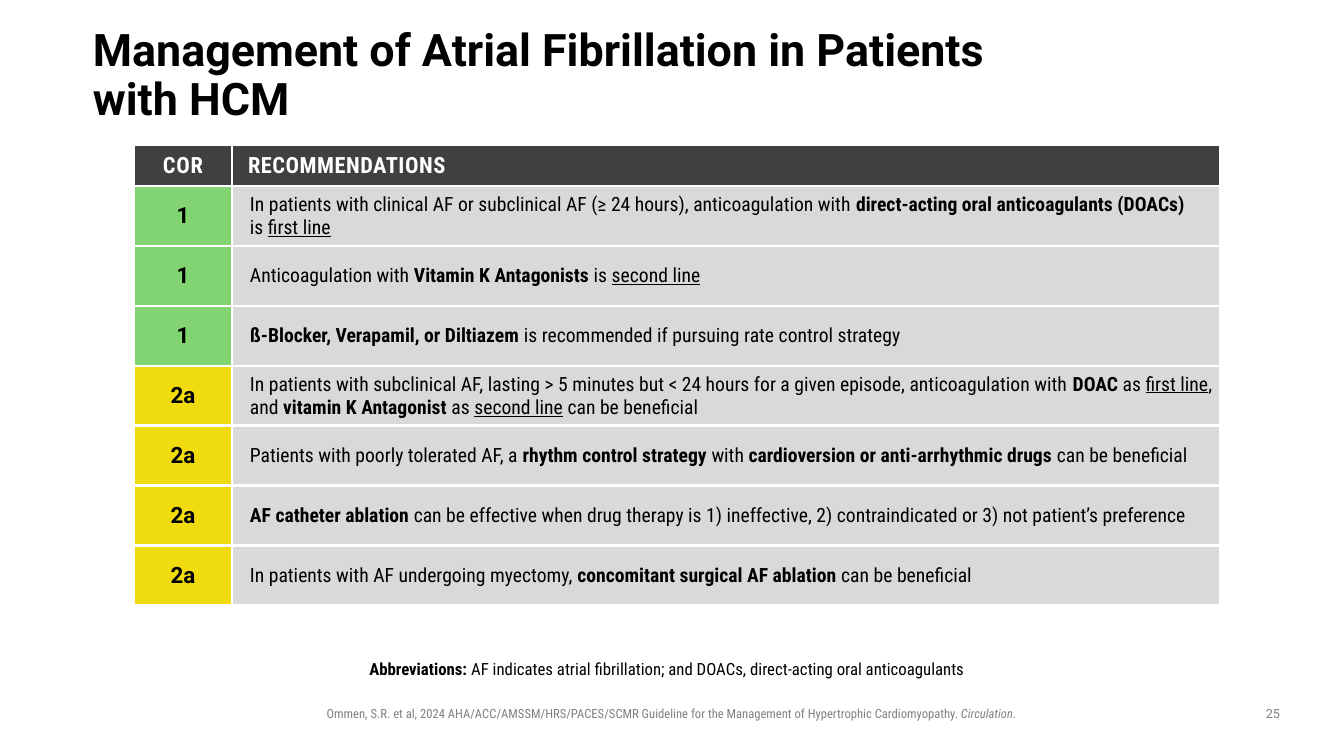
from lxml import etree
from pptx import Presentation
from pptx.dml.color import RGBColor
from pptx.enum.text import MSO_ANCHOR, MSO_AUTO_SIZE, PP_ALIGN
from pptx.oxml.ns import qn
from pptx.util import Pt

LEFT, CENTER = PP_ALIGN.LEFT, PP_ALIGN.CENTER
TOP, MIDDLE = MSO_ANCHOR.TOP, MSO_ANCHOR.MIDDLE
NO_FIT = MSO_AUTO_SIZE.NONE
PX = 914400 / 100.8  # EMU in one px

THEME = {
    "sans": "Roboto", "narrow": "Roboto Condensed",
    "black": "000000", "white": "FFFFFF", "grey": "808080",
    "header": "404040", "row": "D9D9D9",
    "1": "82D472", "2a": "F0DB0E",
    "title": 32, "heading": 16, "text": 14, "note": 12, "small": 9,
    "border": 2.25,
}

RECOMMENDATIONS = [
    ("1", [("In patients with clinical AF or subclinical AF (≥ 24 hours), anticoagulation with ", ""),
           ("direct-acting oral anticoagulants (DOACs)", "b"), ("\n", ""),
           ("is ", ""), ("first line", "u")]),
    ("1", [("Anticoagulation with ", ""), ("Vitamin K Antagonists ", "b"),
           ("is ", ""), ("second line", "u")]),
    ("1", [("ß-Blocker, Verapamil, or Diltiazem ", "b"),
           ("is recommended if pursuing rate control strategy", "")]),
    ("2a", [("In patients with subclinical AF, lasting > 5 minutes but < 24 hours "
             "for a given episode, anticoagulation with ", ""),
            ("DOAC", "b"), (" as ", ""), ("first line", "u"), (", and ", ""),
            ("vitamin K Antagonist ", "b"), ("as ", ""), ("second line", "u"),
            (" can be beneficial", "")]),
    ("2a", [("Patients with poorly tolerated AF, a ", ""), ("rhythm control strategy ", "b"),
            ("with ", ""), ("cardioversion or anti-arrhythmic drugs ", "b"),
            ("can be beneficial", "")]),
    ("2a", [("AF catheter ablation ", "b"),
            ("can be effective when drug therapy is 1) ineffective, "
             "2) contraindicated or 3) not patient’s preference", "")]),
    ("2a", [("In patients with AF undergoing myectomy, ", ""),
            ("concomitant surgical AF ablation ", "b"), ("can be beneficial", "")]),
]


def write(frame, pieces, font, size, color, align=CENTER, tracking=0):
    """Fill the first paragraph; styles are b(old), i(talic) and u(nderlined)."""
    para = frame.paragraphs[0]
    para.alignment = align
    para.space_before = Pt(0)
    for text, style in pieces:
        if text == "\n":
            para.add_line_break()
            continue
        run = para.add_run()
        run.text = text
        run.font.name = THEME[font]
        run.font.size = Pt(THEME[size])
        run.font.color.rgb = RGBColor.from_string(THEME[color])
        run.font.bold = "b" in style
        run.font.italic = "i" in style
        run.font.underline = "u" in style
        if tracking:
            run._r.get_or_add_rPr().set("spc", str(tracking))
    return para


def place(box, left, top, width, height, margins, anchor=TOP):
    """Position a text shape and set up its frame; margins run left, top, right, bottom."""
    box.left, box.top, box.width, box.height = (round(v * PX) for v in (left, top, width, height))
    frame = box.text_frame
    frame.word_wrap = True
    frame.auto_size = NO_FIT
    frame.vertical_anchor = anchor
    (frame.margin_left, frame.margin_top,
     frame.margin_right, frame.margin_bottom) = (round(v * PX) for v in margins)
    return frame


deck = Presentation()
deck.slide_width, deck.slide_height = round(1344 * PX), round(756 * PX)
slide = deck.slides.add_slide(deck.slide_layouts[1])
title, abbreviations = slide.placeholders

# Title
frame = place(title, 93, 40, 977, 73, (0, 0, 0, 0), MIDDLE)
para = write(frame, [("Management of Atrial Fibrillation in Patients with HCM", "b")],
             "sans", "title", "black", LEFT)
para.line_spacing = 0.9

# Table grid
HEADER_HEIGHT, ROW_HEIGHT = 41, 60
COLUMN_WIDTHS = (98, 988)
row_count = len(RECOMMENDATIONS) + 1
table = slide.shapes.add_table(
    row_count, 2, round(134 * PX), round(145 * PX), round(sum(COLUMN_WIDTHS) * PX),
    round((HEADER_HEIGHT + ROW_HEIGHT * len(RECOMMENDATIONS)) * PX)).table
table.horz_banding = False
for column, width in zip(table.columns, COLUMN_WIDTHS):
    column.width = round(width * PX)
for index, row in enumerate(table.rows):
    row.height = round((ROW_HEIGHT if index else HEADER_HEIGHT) * PX)

# Table text
write(table.cell(0, 0).text_frame, [("COR", "b")], "narrow", "heading", "white", tracking=50)
para = write(table.cell(0, 1).text_frame, [("RECOMMENDATIONS", "b")],
             "narrow", "heading", "white", LEFT, tracking=40)
para._p.get_or_add_pPr().set("marL", str(round(6 * PX)))
for index, (grade, pieces) in enumerate(RECOMMENDATIONS, start=1):
    write(table.cell(index, 0).text_frame, [(grade, "b")], "sans", "heading", "black")
    para = write(table.cell(index, 1).text_frame, pieces, "narrow", "text", "black", LEFT)
    para._p.get_or_add_pPr().set("marL", str(round(13 * PX)))

# Table fills, margins and white borders
for index in range(row_count):
    grade_color = RECOMMENDATIONS[index - 1][0] if index else "header"
    for column, color in enumerate((grade_color, "row" if index else "header")):
        cell = table.cell(index, column)
        cell.vertical_anchor = MIDDLE
        if index:
            cell.margin_left = cell.margin_right = round(5 * PX)
            cell.margin_top = cell.margin_bottom = round(5 * PX)
        cell.fill.solid()
        cell.fill.fore_color.rgb = RGBColor.from_string(THEME[color])
        properties = cell._tc.get_or_add_tcPr()
        for position, side in enumerate(("lnL", "lnR", "lnT", "lnB")):
            line = etree.Element(qn("a:" + side), w=str(Pt(THEME["border"])))
            fill = etree.SubElement(line, qn("a:solidFill"))
            etree.SubElement(fill, qn("a:srgbClr"), val=THEME["white"])
            properties.insert(position, line)

# Abbreviations
frame = place(abbreviations, 174, 656, 996, 24, (0, 5, 10, 5))
properties = frame.paragraphs[0]._p.get_or_add_pPr()
properties.set("marL", "0")
properties.set("indent", "0")
etree.SubElement(properties, qn("a:buNone"))
para = write(frame, [
    ("Abbreviations: ", "b"),
    ("AF indicates atrial fibrillation; and DOACs, direct-acting oral anticoagulants", "")],
    "narrow", "note", "black")
para.line_spacing = 0.9

# Citation and slide number
citation = slide.shapes.add_textbox(0, 0, 0, 0)
frame = place(citation, 296, 701, 751, 25, (10, 5, 10, 5))
write(frame, [
    ("Ommen, S.R. et al, 2024 AHA/ACC/AMSSM/HRS/PACES/SCMR Guideline for the "
     "Management of Hypertrophic Cardiomyopathy. ", ""),
    ("Circulation", "i"), (".", "")], "narrow", "small", "grey")
number = slide.shapes.add_textbox(0, 0, 0, 0)
frame = place(number, 1252, 701, 42, 26, (10, 5, 10, 5))
write(frame, [("25", "")], "sans", "small", "grey")

deck.save("out.pptx")
